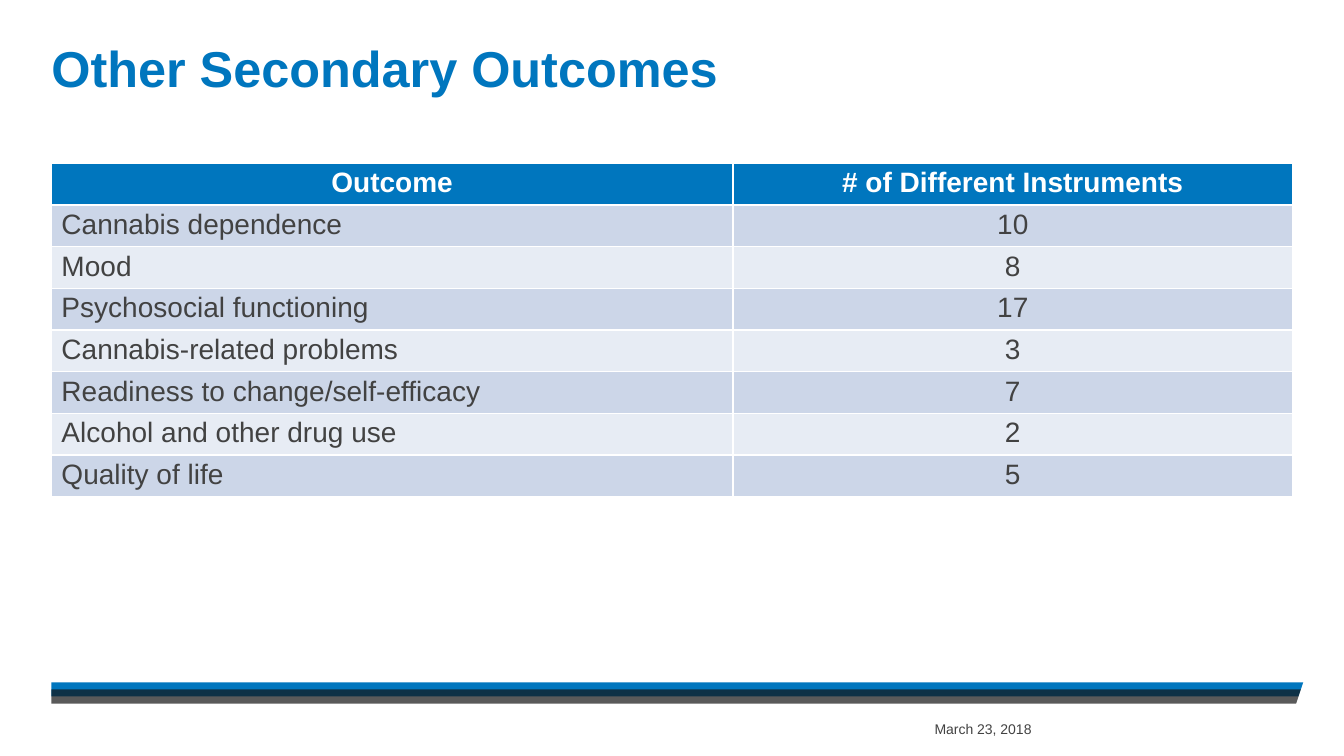
from lxml import etree
from pptx import Presentation
from pptx.dml.color import RGBColor
from pptx.enum.shapes import MSO_SHAPE as Shape
from pptx.enum.text import MSO_ANCHOR as Anchor, PP_ALIGN as Align
from pptx.oxml.ns import qn
from pptx.util import Inches, Pt

BLUE = RGBColor(0x00, 0x76, 0xBE)
BLACK = RGBColor(0x14, 0x14, 0x14)
GREY = RGBColor(0x42, 0x42, 0x42)
WHITE = RGBColor(0xFF, 0xFF, 0xFF)
BANDS = [RGBColor(0xE7, 0xEC, 0xF4), RGBColor(0xCC, 0xD6, 0xE8)]

FONT = "Arial"
LEFT, WIDTH = 0.51, 12.31
ROW_H = 0.41
COLUMNS = [6.76, 5.55]
ROWS = [
    ("Outcome", "# of Different Instruments"),
    ("Cannabis dependence", "10"),
    ("Mood", "8"),
    ("Psychosocial functioning", "17"),
    ("Cannabis-related problems", "3"),
    ("Readiness to change/self-efficacy", "7"),
    ("Alcohol and other drug use", "2"),
    ("Quality of life", "5"),
]


def style_text(p, size, color, bold=False, align=Align.LEFT):
    p.alignment = align
    for r in p.runs:
        r.font.name = FONT
        r.font.size = Pt(size)
        r.font.bold = bold
        r.font.color.rgb = color


def paint(sp, color):
    sp.shadow.inherit = False
    sp.fill.solid()
    sp.fill.fore_color.rgb = color
    sp.line.fill.background()


def add_text(s, text, x, y, w, h, size, color, **style):
    tf = s.shapes.add_textbox(Inches(x), Inches(y), Inches(w), Inches(h)).text_frame
    tf.word_wrap = True
    tf.text = text
    style_text(tf.paragraphs[0], size, color, **style)
    return tf


def add_title(s, x, y, w, h):
    tf = add_text(s, "Other Secondary Outcomes", x, y, w, h, 36, BLUE, bold=True)
    tf.margin_left = tf.margin_right = tf.margin_top = tf.margin_bottom = 0
    tf.paragraphs[0].line_spacing = 0.85


def add_outcomes(s, x, y, w):
    frame = s.shapes.add_table(len(ROWS), len(COLUMNS), Inches(x), Inches(y),
                               Inches(w), Inches(ROW_H * len(ROWS)))
    table = frame.table
    for column, width in zip(table.columns, COLUMNS):
        column.width = Inches(width)
    for i, values in enumerate(ROWS):
        header = i == 0
        table.rows[i].height = Inches(ROW_H)
        for j, value in enumerate(values):
            cell = table.cell(i, j)
            cell.margin_top = cell.margin_bottom = Inches(0.04)
            cell.fill.solid()
            cell.fill.fore_color.rgb = BLUE if header else BANDS[i % 2]
            cell.text = value
            style_text(cell.text_frame.paragraphs[0], 20, WHITE if header else GREY,
                       bold=header, align=Align.CENTER if header or j else Align.LEFT)


def add_footer(s, x, y, w, bar_h):
    # Blue bar, with a translucent dark bar half a height lower
    for k, color in enumerate((BLUE, BLACK)):
        bar = s.shapes.add_shape(Shape.RECTANGLE, Inches(x), Inches(y + k * bar_h / 2),
                                 Inches(w), Inches(bar_h))
        paint(bar, color)
    rgb = bar.fill._xPr.find(".//" + qn("a:srgbClr"))
    etree.SubElement(rgb, qn("a:alpha")).set("val", "70000")

    # White wedge that slants the right end
    right, top, bottom = x + w + 0.03, y - 0.01, y + 0.23
    wedge = s.shapes.build_freeform(Inches(right - 0.12), Inches(bottom), scale=1.0)
    wedge.add_line_segments([(Inches(px), Inches(py)) for px, py in
                             ((right - 0.04, top), (right, top), (right, bottom))])
    paint(wedge.convert_to_shape(), WHITE)

    # Date
    tf = add_text(s, "March 23, 2018", x + 8.42, y + 0.35, 1.64, 0.23, 10, GREY,
                  align=Align.CENTER)
    tf.vertical_anchor = Anchor.MIDDLE


def main():
    prs = Presentation()
    prs.slide_width, prs.slide_height = Inches(13.33), Inches(7.5)
    s = prs.slides.add_slide(prs.slide_layouts[6])
    add_footer(s, LEFT, 6.77, 12.43, 0.14)
    add_title(s, LEFT, 0.46, WIDTH, 1.05)
    add_outcomes(s, LEFT, 1.62, WIDTH)
    prs.save("out.pptx")


if __name__ == "__main__":
    main()
